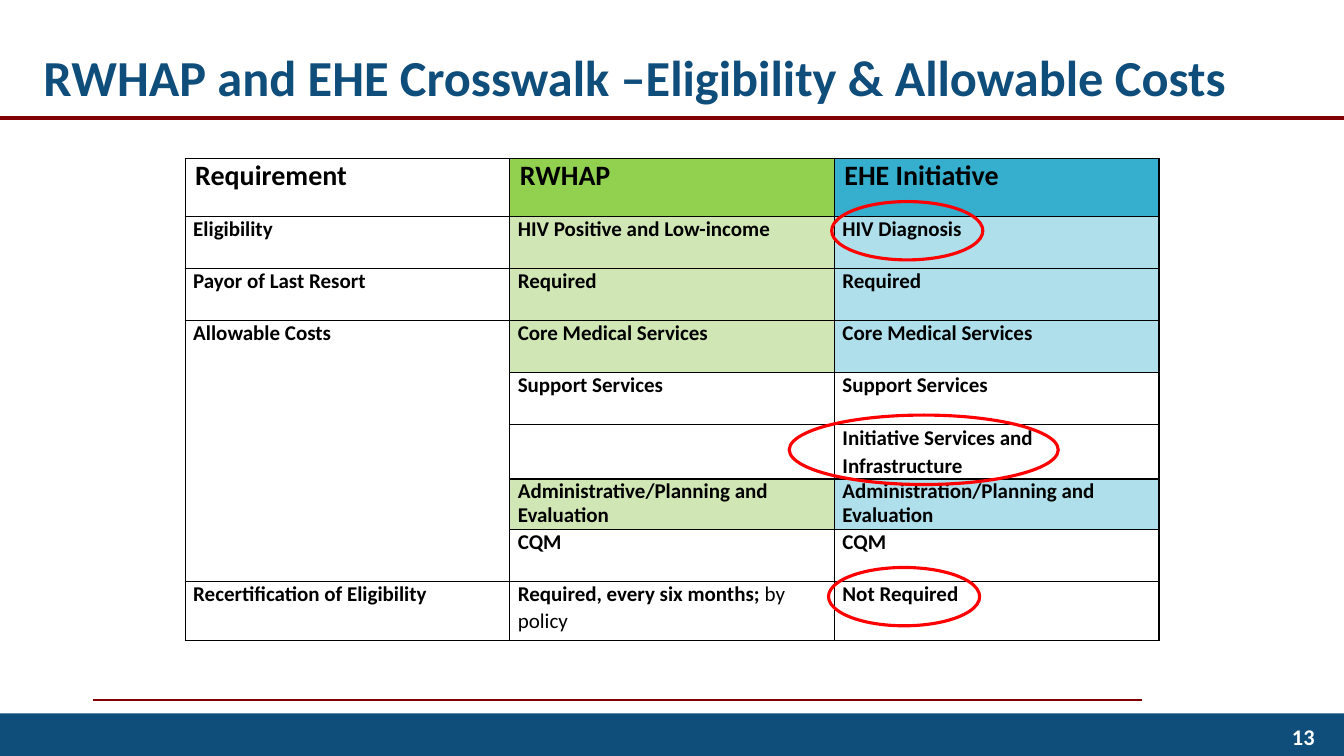
from dataclasses import dataclass
from typing import Optional

from lxml.etree import SubElement
from pptx import Presentation
from pptx.dml.color import RGBColor
from pptx.enum.shapes import MSO_CONNECTOR, MSO_SHAPE
from pptx.enum.text import MSO_ANCHOR, PP_ALIGN
from pptx.oxml.ns import qn
from pptx.util import Cm, Pt

NAVY = RGBColor(0x0F, 0x4D, 0x7B)
MAROON = RGBColor(0x80, 0x00, 0x00)
RED = RGBColor(0xFF, 0x00, 0x00)
BLACK = RGBColor(0x00, 0x00, 0x00)
WHITE = RGBColor(0xFF, 0xFF, 0xFF)
GREEN = RGBColor(0x92, 0xD0, 0x50)
PALE_GREEN = RGBColor(0xD1, 0xE6, 0xB5)
BLUE = RGBColor(0x36, 0xAE, 0xCE)
PALE_BLUE = RGBColor(0xAE, 0xDF, 0xEB)
FONT = "Calibri"


@dataclass
class Entry:
    text: str = ""
    plain_tail: str = ""
    spacing: Optional[object] = None
    second_line: str = ""


@dataclass
class Row:
    height: float
    entries: tuple
    fills: tuple = (None, None, None)


@dataclass
class Rule:
    left: float
    right: float
    top: float
    weight: float


@dataclass
class Ring:
    left: float
    top: float
    width: float
    height: float


TINTED = (None, PALE_GREEN, PALE_BLUE)
ROWS = (
    Row(1.46, (Entry("Requirement"), Entry("RWHAP"), Entry("EHE Initiative")), (None, GREEN, BLUE)),
    Row(1.31, (Entry("Eligibility"), Entry("HIV Positive and Low-income"), Entry("HIV Diagnosis")), TINTED),
    Row(1.31, (Entry("Payor of Last Resort"), Entry("Required"), Entry("Required")), TINTED),
    Row(1.31, (Entry("Allowable Costs"), Entry("Core Medical Services"), Entry("Core Medical Services")), TINTED),
    Row(1.31, (Entry(), Entry("Support Services"), Entry("Support Services"))),
    Row(1.38, (Entry(), Entry(), Entry("Initiative Services and Infrastructure", spacing=Pt(19.5)))),
    Row(1.27, (Entry(), Entry("Administrative/Planning and", second_line="Evaluation"),
               Entry("Administration/Planning and", second_line="Evaluation")), TINTED),
    Row(1.31, (Entry(), Entry("CQM"), Entry("CQM"))),
    Row(1.49, (Entry("Recertification of Eligibility"),
               Entry("Required, every six months; ", plain_tail="by policy", spacing=1.02),
               Entry("Not Required"))),
)
RULES = (Rule(2.34, 28.78, 17.65, 1.5), Rule(0, 33.87, 2.97, 3))
RINGS = (
    Ring(20.96, 5.08, 3.81, 1.47),
    Ring(19.89, 10.46, 6.78, 1.75),
    Ring(20.88, 14.3, 3.81, 1.47),
)
COLUMN_WIDTH = 8.18
MERGED_ROWS = (3, 7)


def add_text(para, text: str, *, size: float, color: RGBColor = BLACK, bold: bool = True) -> None:
    span = para.add_run()
    span.text = text
    span.font.name = FONT
    span.font.size = Pt(size)
    span.font.bold = bold
    span.font.color.rgb = color


def add_rule(page, rule: Rule) -> None:
    line = page.shapes.add_connector(
        MSO_CONNECTOR.STRAIGHT, Cm(rule.left), Cm(rule.top), Cm(rule.right), Cm(rule.top))
    line.line.color.rgb = MAROON
    line.line.width = Pt(rule.weight)
    SubElement(line._element.spPr, qn("a:effectLst"))


def add_footer(page) -> None:
    band = page.shapes.add_shape(MSO_SHAPE.RECTANGLE, 0, Cm(17.98), Cm(33.87), Cm(1.07))
    band.shadow.inherit = False
    band.fill.solid()
    band.fill.fore_color.rgb = NAVY
    band.line.fill.background()
    box = page.shapes.add_textbox(Cm(25.76), Cm(18.03), Cm(7.62), Cm(1.07))
    box.text_frame.word_wrap = True
    box.text_frame.vertical_anchor = MSO_ANCHOR.MIDDLE
    para = box.text_frame.paragraphs[0]
    para.alignment = PP_ALIGN.RIGHT
    add_text(para, "13", size=16, color=WHITE)


def add_title(page, text: str) -> None:
    title = page.shapes.title
    title.left, title.top, title.width, title.height = Cm(0.84), 0, Cm(31.95), Cm(2.97)
    frame = title.text_frame
    frame.vertical_anchor = MSO_ANCHOR.BOTTOM
    frame.margin_bottom = Cm(0.28)
    para = frame.paragraphs[0]
    para.alignment = PP_ALIGN.LEFT
    add_text(para, text, size=36, color=NAVY)


def add_borders(cell) -> None:
    properties = cell._tc.get_or_add_tcPr()
    for position, side in enumerate(("a:lnL", "a:lnR", "a:lnT", "a:lnB")):
        line = SubElement(properties, qn(side), w=str(Pt(1)))
        fill = SubElement(line, qn("a:solidFill"))
        SubElement(fill, qn("a:srgbClr"), val=str(BLACK))
        properties.insert(position, line)


def fill_cell(cell, entry: Entry, fill: Optional[RGBColor], *, size: float, indent: float) -> None:
    cell.margin_left = Cm(indent)
    cell.margin_right = Cm(0.2)
    cell.margin_top = cell.margin_bottom = 0
    if fill is None:
        cell.fill.background()
    else:
        cell.fill.solid()
        cell.fill.fore_color.rgb = fill
    add_borders(cell)
    para = cell.text_frame.paragraphs[0]
    if entry.spacing:
        para.line_spacing = entry.spacing
    if entry.text:
        add_text(para, entry.text, size=size)
    if entry.plain_tail:
        add_text(para, entry.plain_tail, size=size, bold=False)
    if entry.second_line:
        second = cell.text_frame.add_paragraph()
        second.line_spacing = Pt(15.9)
        second.space_before = Pt(0.6)
        add_text(second, entry.second_line, size=size)


def add_crosswalk(page) -> None:
    columns = len(ROWS[0].entries)
    height = sum(row.height for row in ROWS)
    table = page.shapes.add_table(
        len(ROWS), columns, Cm(4.67), Cm(3.99), Cm(COLUMN_WIDTH * columns), Cm(height)).table
    table.horz_banding = False
    table.first_row = False
    for column in table.columns:
        column.width = Cm(COLUMN_WIDTH)
    for number, row in enumerate(ROWS):
        table.rows[number].height = Cm(row.height)
        size, indent = (20, 0.25) if number == 0 else (15, 0.2)
        for column, (entry, fill) in enumerate(zip(row.entries, row.fills)):
            fill_cell(table.cell(number, column), entry, fill, size=size, indent=indent)
    first, last = MERGED_ROWS
    table.cell(first, 0).merge(table.cell(last, 0))


def add_ring(page, ring: Ring) -> None:
    oval = page.shapes.add_shape(
        MSO_SHAPE.OVAL, Cm(ring.left), Cm(ring.top), Cm(ring.width), Cm(ring.height))
    oval.shadow.inherit = False
    oval.fill.background()
    oval.line.color.rgb = RED
    oval.line.width = Pt(2.25)


def main() -> None:
    deck = Presentation()
    deck.slide_width, deck.slide_height = Cm(33.87), Cm(19.05)
    page = deck.slides.add_slide(deck.slide_layouts[5])
    add_title(page, "RWHAP and EHE Crosswalk –Eligibility & Allowable Costs")
    for rule in RULES:
        add_rule(page, rule)
    add_footer(page)
    add_crosswalk(page)
    for ring in RINGS:
        add_ring(page, ring)
    deck.save("out.pptx")


if __name__ == "__main__":
    main()
